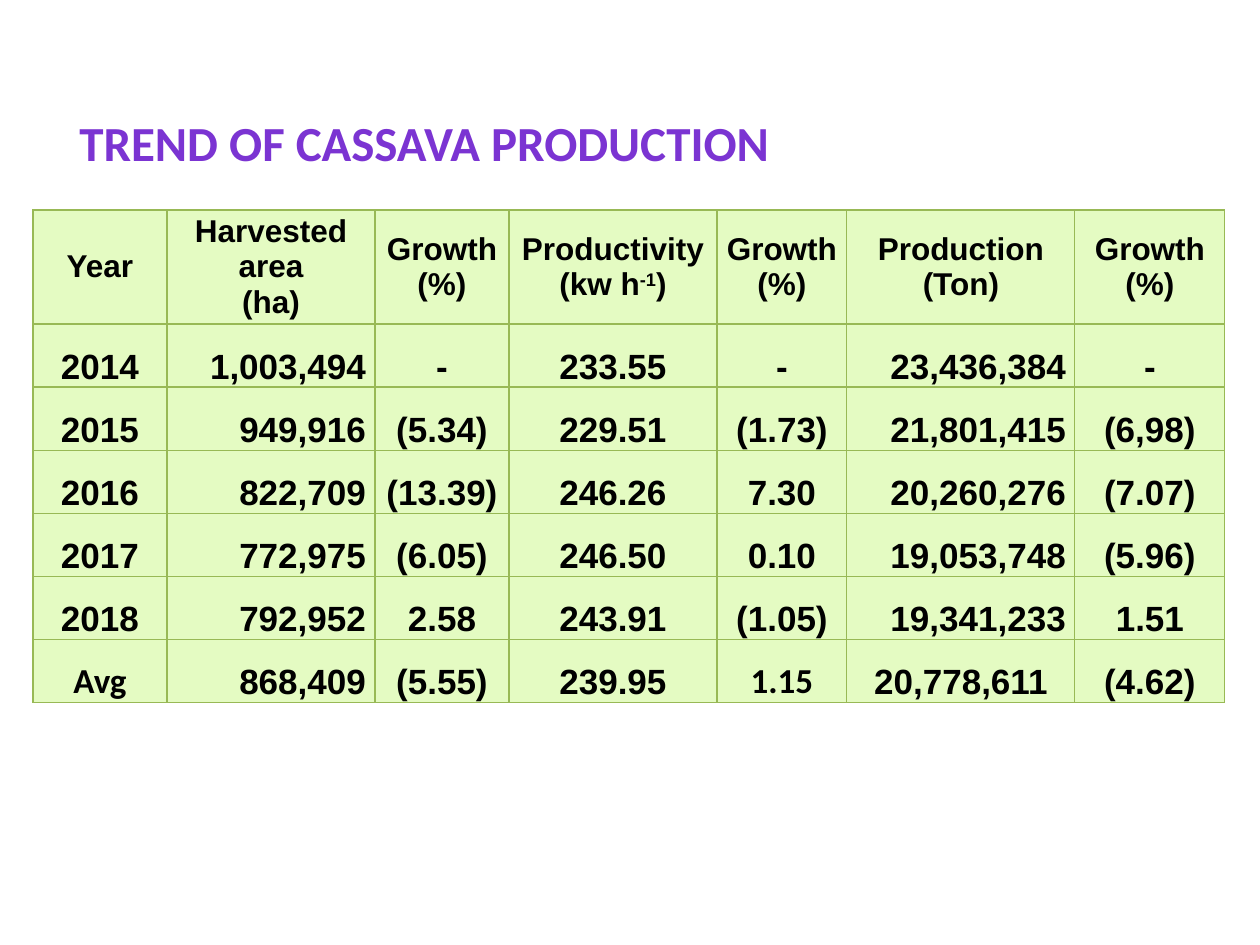
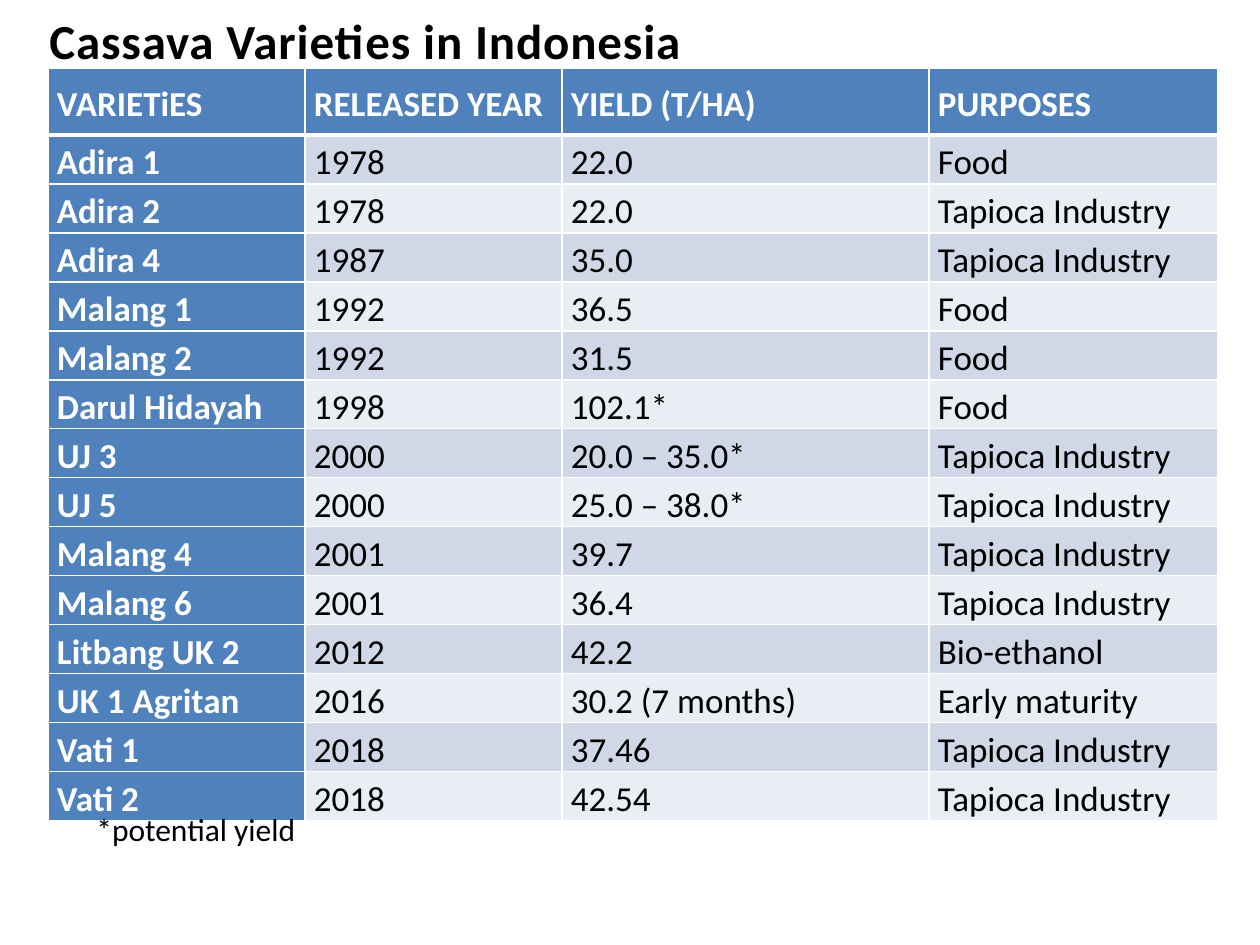
from pptx import Presentation, util as u
from pptx.dml.color import RGBColor
from pptx.enum import text as t
from pptx.oxml import parse_xml
from pptx.oxml.ns import nsdecls

# Content
TREND = "TREND OF CASSAVA PRODUCTION"
CROP_HEAD = ["Year", "Harvested area\n(ha)", "Growth\n(%)", "Productivity\n(kw h^-1^)",
             "Growth\n(%)", "Production\n(Ton)", "Growth\n(%)"]
CROPS = [
    ("2014", "1,003,494", "-", "233.55", "-", "23,436,384", "-"),
    ("2015", "949,916", "(5.34)", "229.51", "(1.73)", "21,801,415", "(6,98)"),
    ("2016", "822,709", "(13.39)", "246.26", "7.30", "20,260,276", "(7.07)"),
    ("2017", "772,975", "(6.05)", "246.50", "0.10", "19,053,748", "(5.96)"),
    ("2018", "792,952", "2.58", "243.91", "(1.05)", "19,341,233", "1.51"),
    ("Avg", "868,409", "(5.55)", "239.95", "1.15", "20,778,611", "(4.62)"),
]
KINDS = "Cassava Varieties in Indonesia"
KIND_HEAD = ["VARIETiES", "RELEASED YEAR", "YIELD (T/HA)", "PURPOSES"]
TAP = "Tapioca Industry"
PLANTS = [
    ("Adira 1", "1978", "22.0", "Food"),
    ("Adira 2", "1978", "22.0", TAP),
    ("Adira 4", "1987", "35.0", TAP),
    ("Malang 1", "1992", "36.5", "Food"),
    ("Malang 2", "1992", "31.5", "Food"),
    ("Darul Hidayah", "1998", "102.1*", "Food"),
    ("UJ 3", "2000", "20.0 – 35.0*", TAP),
    ("UJ 5", "2000", "25.0 – 38.0*", TAP),
    ("Malang 4", "2001", "39.7", TAP),
    ("Malang 6", "2001", "36.4", TAP),
    ("Litbang UK 2", "2012", "42.2", "Bio-ethanol"),
    ("UK 1 Agritan", "2016", "30.2 (7 months)", "Early maturity"),
    ("Vati 1", "2018", "37.46", TAP),
    ("Vati 2", "2018", "42.54", TAP),
]
NOTE = "*potential yield"


class Theme:
    head, body = "Calibri", "Arial"
    violet, black, white = "7B34D2", "000000", "FFFFFF"
    lime, olive = "E4FBC2", "98B955"
    blue, bands = "4F81BD", ("D0D8E8", "E9EDF4")
    title, cell, label = 28, 20, 18


SCALE = u.Inches(1) / 126
LEFT, MID, RIGHT = t.PP_ALIGN.LEFT, t.PP_ALIGN.CENTER, t.PP_ALIGN.RIGHT
CENTER, BOTTOM, TOP = (t.MSO_ANCHOR.MIDDLE, t.MSO_ANCHOR.BOTTOM,
                       t.MSO_ANCHOR.TOP)


def px(n):
    return u.Emu(round(n * SCALE))


def put(frame, words, size, color=Theme.black, bold=False, face=Theme.head,
        align=LEFT, lead=None, after=None):
    """Write one paragraph a line; text between ^ marks is raised."""
    for i, line in enumerate(words.split("\n")):
        para = frame.paragraphs[0] if i == 0 else frame.add_paragraph()
        para.alignment = align
        if lead:
            para.line_spacing = lead
        if after:
            para.space_after = u.Pt(after)
        font = para.font
        font.name, font.size, font.bold = face, u.Pt(size), bold
        font.color.rgb = RGBColor.from_string(color)
        for j, part in enumerate(line.split("^")):
            run = para.add_run()
            run.text = part
            if j % 2:
                run._r.get_or_add_rPr().set("baseline", "30000")


def label(slide, box, words, size, **look):
    frame = slide.shapes.add_textbox(*map(px, box)).text_frame
    frame.word_wrap = True
    put(frame, words, size, **look)
    return frame.paragraphs[0]


def edge(cell, side, color, width):
    cell._tc.get_or_add_tcPr().append(parse_xml(
        f'<a:ln{side} {nsdecls("a")} w="{int(u.Pt(width))}"><a:solidFill>'
        f'<a:srgbClr val="{color}"/></a:solidFill></a:ln{side}>'))


def grid(slide, left, top, cols, rows, data, style):
    """Add a table; style(row, col) gives fill, anchor, edges and text look."""
    table = slide.shapes.add_table(len(rows), len(cols), px(left), px(top),
                                   px(sum(cols)), px(sum(rows))).table
    table.first_row = table.horz_banding = False
    for col, wide in zip(table.columns, cols):
        col.width = px(wide)
    for row, high in zip(table.rows, rows):
        row.height = px(high)
    for r, line in enumerate(data):
        for c, words in enumerate(line):
            cell = table.cell(r, c)
            fill, anchor, edges, look = style(r, c)
            cell.margin_left = cell.margin_right = px(9)
            cell.margin_top = cell.margin_bottom = 0
            cell.vertical_anchor = anchor
            for side, wide in zip("LRTB", edges[1]):
                edge(cell, side, edges[0], wide)
            cell.fill.solid()
            cell.fill.fore_color.rgb = RGBColor.from_string(fill)
            put(cell.text_frame, words, **look)


def crop_style(r, c):
    last = len(CROPS)
    look = dict(size=Theme.cell if r else Theme.label, bold=True,
                face=Theme.body, align=MID)
    if r:
        look["lead"] = 1.0 if (r, c) == (5, 5) else 1.5
        if c == 1 or (c == 5 and r < last):
            look["align"] = RIGHT
        if r == last and c in (0, 4):
            look["face"] = Theme.head
    return (Theme.lime, BOTTOM if r else CENTER,
            (Theme.olive, [0.75] * 4), look)


def plant_style(r, c):
    strong = r == 0 or c == 0
    fill = Theme.blue if strong else Theme.bands[(r - 1) % 2]
    edges = [1, 1, 3 if r == 1 else 1, 1 if r else 3]
    look = dict(size=Theme.cell, bold=strong, lead=1.15, after=10,
                color=Theme.white if strong else Theme.black)
    return fill, TOP if r else CENTER, (Theme.white, edges), look


def main():
    deck = Presentation()
    deck.slide_width, deck.slide_height = px(1260), px(945)
    trend, kinds = (deck.slides.add_slide(deck.slide_layouts[6])
                    for _ in range(2))

    # Production by year
    label(trend, (67, 113, 1158, 67), TREND, Theme.title,
          color=Theme.violet, bold=True, lead=0.9)
    grid(trend, 33, 210, [134, 208, 134, 208, 130, 228, 150],
         [114] + [63] * len(CROPS), [CROP_HEAD] + CROPS, crop_style)

    # Varieties
    grid(kinds, 48, 68, [257, 257, 367, 289],
         [67] + [49] * len(PLANTS), [KIND_HEAD] + PLANTS, plant_style)
    head = label(kinds, (37, 4, 668, 74), KINDS, Theme.title, bold=True)
    head.runs[0]._r.get_or_add_rPr().set("spc", "50")
    label(kinds, (84, 804, 557, 60), NOTE, Theme.label)

    deck.save("out.pptx")


if __name__ == "__main__":
    main()
